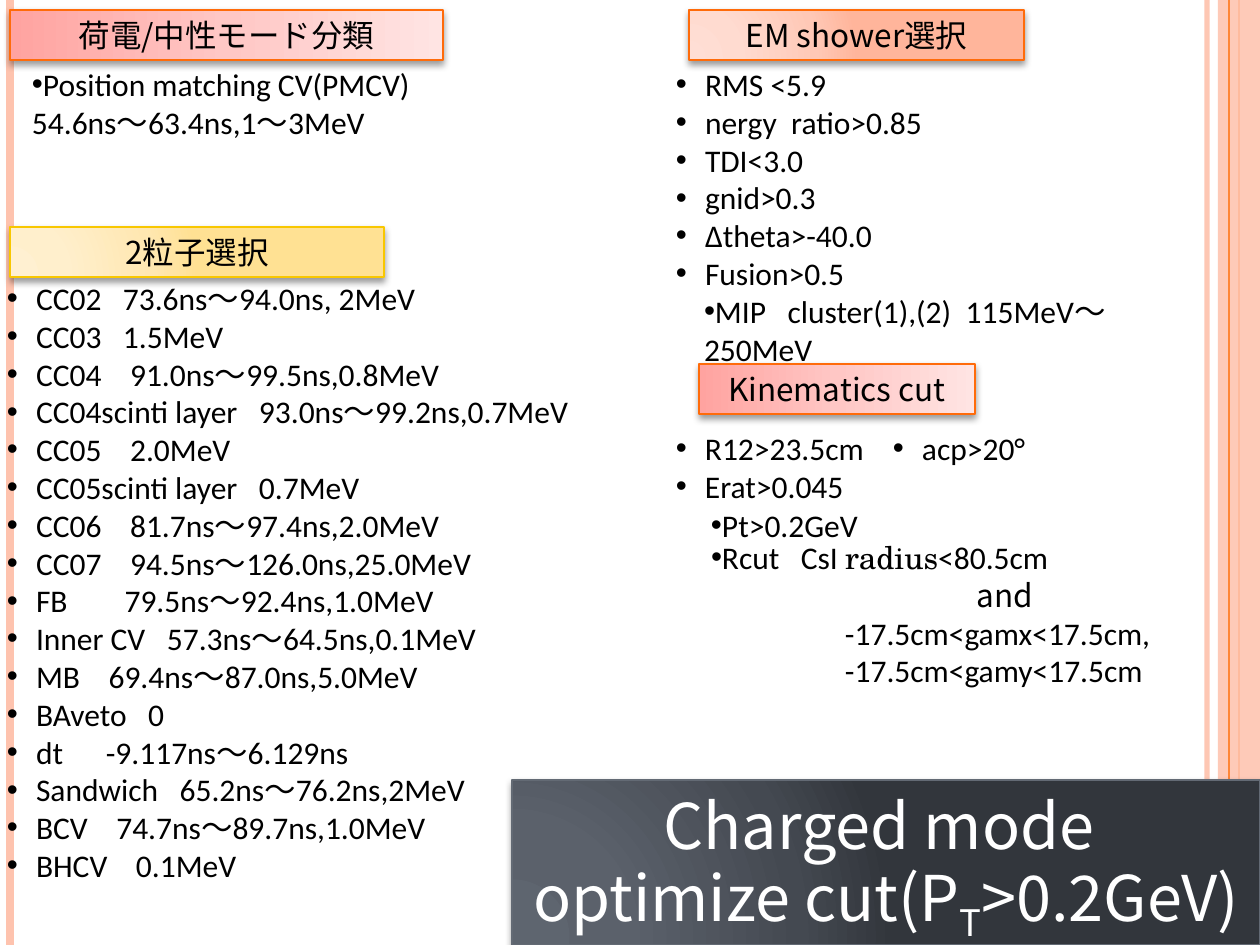
from dataclasses import dataclass

from pptx import Presentation
from pptx import util as u
from pptx.dml.color import RGBColor
from pptx.enum import shapes, text
from pptx.oxml import parse_xml
from pptx.oxml.ns import nsdecls, qn

SCALE = 914400 / 126


@dataclass(frozen=True)
class Theme:
    latin: str = "Calibri"
    asian: str = "Noto Sans CJK JP"
    serif: str = "TeX Gyre Schola"
    body_size: int = 18
    title_size: int = 36
    ink: str = "000000"
    paper: str = "FFFFFF"
    stripe: str = "FEC3AE"
    accent: str = "FE8637"
    orange: str = "FF6B0A"
    yellow: str = "F8C700"
    slate: str = "636A74"
    pink_stops: tuple = ((0, "FFA3A0"), (50, "FFC7C5"), (100, "FFE4E3"))
    peach_stops: tuple = ((0, "FFDED5"), (30, "FFDBD0"), (75, "FFC8B6"), (100, "FFB59B"))
    gold_stops: tuple = ((0, "FFF0D1"), (30, "FFEFCC"), (75, "FFE7B1"), (100, "FFE193"))
    slate_stops: tuple = ((0, "5E656F"), (30, "5B616B"), (75, "444951"), (100, "32363C"))


THEME = Theme()
LINEAR = '<a:lin ang="0" scaled="0"/>'
RADIAL = '<a:path path="circle"><a:fillToRect l="5000" t="100000" r="120000" b="10000"/></a:path>'


def px(value):
    return u.Emu(round(value * SCALE))


def node(tag, attributes="", inner=""):
    return parse_xml(f'<a:{tag} {nsdecls("a")} {attributes}>{inner}</a:{tag}>')


def apply(target, values):
    for name, value in values.items():
        setattr(target, name, value)


def place(shape, box):
    apply(shape, dict(zip(("left", "top", "width", "height"), map(px, box))))


def gap(count):
    return " ", {"spacing": round((count - 1) * 407)}


def row(name, count, value):
    return [name, gap(count), value]


def add_span(para, content, size, color, font):
    words, look = content if isinstance(content, tuple) else (content, {})
    span = para.add_run()
    span.text = words
    span.font.color.rgb = RGBColor.from_string(color)
    apply(span.font, {"size": u.Pt(size), "name": look.get("font", font), "bold": False})
    properties = span._r.get_or_add_rPr()
    properties.append(node("ea", f'typeface="{THEME.asian}"'))
    for key, name in (("spacing", "spc"), ("baseline", "baseline")):
        if key in look:
            properties.set(name, str(look[key]))


def write(shape, lines, bullets=(), margin=0, hang=0, size=THEME.body_size, lead=0,
          color=THEME.ink, font=THEME.latin, align=text.PP_ALIGN.LEFT, wrap=True):
    frame = shape.text_frame
    apply(frame, {"word_wrap": wrap, "auto_size": text.MSO_AUTO_SIZE.NONE,
                  "vertical_anchor": text.MSO_ANCHOR.TOP,
                  "margin_left": px(12), "margin_right": px(12),
                  "margin_top": px(6), "margin_bottom": px(6)})
    for index, line in enumerate(lines):
        para = frame.add_paragraph() if index else frame.paragraphs[0]
        apply(para, {"alignment": align, "line_spacing": u.Pt(size * 1.2),
                     "space_before": u.Pt(lead if index else 0), "space_after": u.Pt(0)})
        properties = para._p.get_or_add_pPr()
        left = margin[index] if isinstance(margin, tuple) else margin
        properties.set("marL", str(px(left)))
        properties.set("indent", str(px(-hang)))
        if index in bullets:
            properties.append(node("buFont", 'typeface="Arial"'))
            properties.append(node("buChar", 'char="•"'))
        else:
            properties.append(node("buNone"))
        for content in [line] if isinstance(line, str) else line:
            add_span(para, content, size, color, font)


def write_list(shape, lines):
    write(shape, lines, bullets=range(len(lines)), margin=63, hang=29)


def add_text(page, box):
    return page.shapes.add_textbox(*map(px, box))


def decorate(shape, stops, direction, line, shadow_alpha, distance):
    shape.line.color.rgb = RGBColor.from_string(line)
    shape.line.width = u.Pt(1)
    shape.fill.gradient()
    properties = shape._element.spPr
    inner = "".join(f'<a:gs pos="{at * 1000}"><a:srgbClr val="{color}"/></a:gs>'
                    for at, color in stops)
    properties.replace(properties.find(qn("a:gradFill")),
                       node("gradFill", 'rotWithShape="1"', f"<a:gsLst>{inner}</a:gsLst>{direction}"))
    shade = f'<a:srgbClr val="{THEME.ink}"><a:alpha val="{shadow_alpha * 1000}"/></a:srgbClr>'
    properties.append(node("effectLst", "", f'<a:outerShdw blurRad="{u.Pt(4)}" dist="{u.Pt(distance)}" '
                           f'dir="5400000" rotWithShape="0">{shade}</a:outerShdw>'))


def add_heading(page, words, box, stops, direction, line):
    shape = page.shapes.add_shape(shapes.MSO_SHAPE.RECTANGLE, *map(px, box))
    shape.shadow.inherit = False
    properties = shape._element.spPr
    properties.remove(properties.find(qn("a:effectLst")))
    decorate(shape, stops, direction, line, 40, 2)
    write(shape, [words], font=THEME.asian, align=text.PP_ALIGN.CENTER)


def set_alpha(shape, percent):
    color = next(shape._element.spPr.iter(qn("a:srgbClr")))
    color.append(node("alpha", f'val="{percent * 1000}"'))


def add_rule(page, x, color, width):
    rule = page.shapes.add_connector(shapes.MSO_CONNECTOR.STRAIGHT, px(x), 0, px(x), px(945))
    rule.line.color.rgb = RGBColor.from_string(color)
    rule.line.width = u.Pt(width)
    rule._element.spPr.append(node("effectLst"))
    return rule


def add_stripes(page):
    set_alpha(add_rule(page, 1207, THEME.stripe, 3), 93)
    add_rule(page, 10, THEME.stripe, 4.5)
    add_rule(page, 1239, THEME.accent, 1.5)
    band = page.shapes.add_shape(shapes.MSO_SHAPE.RECTANGLE, px(1218), 0, px(42), px(945))
    band.shadow.inherit = False
    band.fill.solid()
    band.fill.fore_color.rgb = RGBColor.from_string(THEME.stripe)
    band.line.fill.background()
    set_alpha(band, 87)
    add_rule(page, 1229, THEME.accent, 0.75)


def main():
    deck = Presentation()
    apply(deck, {"slide_width": px(1260), "slide_height": px(945)})
    page = deck.slides.add_slide(deck.slide_layouts[3])
    title, particles, shower = page.placeholders

    add_stripes(page)
    for shape in (particles, shower, title):
        page.shapes._spTree.append(shape._element)

    place(particles, (-39, 273, 659, 624))
    write_list(particles, [
        row("CC02", 3, "73.6ns～94.0ns, 2MeV"),
        row("CC03", 3, "1.5MeV"),
        row("CC04", 4, "91.0ns～99.5ns,0.8MeV"),
        row("CC04scinti layer", 3, "93.0ns～99.2ns,0.7MeV"),
        row("CC05", 4, "2.0MeV"),
        row("CC05scinti layer", 3, "0.7MeV"),
        row("CC06", 4, "81.7ns～97.4ns,2.0MeV"),
        row("CC07", 4, "94.5ns～126.0ns,25.0MeV"),
        row("FB", 8, "79.5ns～92.4ns,1.0MeV"),
        row("Inner CV", 3, "57.3ns～64.5ns,0.1MeV"),
        row("MB", 4, "69.4ns～87.0ns,5.0MeV"),
        row("BAveto", 3, "0"),
        row("dt", 6, "-9.117ns～6.129ns"),
        row("Sandwich", 3, "65.2ns～76.2ns,2MeV"),
        row("BCV", 4, "74.7ns～89.7ns,1.0MeV"),
        row("BHCV", 4, "0.1MeV"),
    ])
    place(shower, (630, 59, 630, 242))
    write_list(shower, ["RMS <5.9", row("nergy", 2, "ratio>0.85"), "TDI<3.0",
                        "gnid>0.3", "Δtheta>-40.0", "Fusion>0.5"])
    place(title, (512, 780, 748, 165))
    decorate(title, THEME.slate_stops, RADIAL, THEME.slate, 42, 1.6)
    write(title, ["Charged mode ", ["optimize cut(P", ("T", {"baseline": -25000}), ">0.2GeV)"]],
          size=THEME.title_size, lead=4, color=THEME.paper, font=THEME.asian,
          align=text.PP_ALIGN.CENTER)

    write(add_text(page, (20, 59, 416, 89)),
          ["Position matching CV(PMCV)", "54.6ns～63.4ns,1～3MeV"], bullets=(0,), wrap=False)
    write(add_text(page, (699, 532, 550, 165)), [
        ["Rcut", gap(3), "CsI ", ("radius", {"font": THEME.serif}), "<80.5cm"],
        [("and", {"font": THEME.asian})],
        "-17.5cm<gamx<17.5cm,",
        "-17.5cm<gamy<17.5cm",
    ], bullets=(0,), margin=(0, 266, 134, 134))
    write_list(add_text(page, (630, 423, 630, 89)), ["R12>23.5cm", "Erat>0.045"])
    write_list(add_text(page, (847, 423, 246, 50)), ["acp>20°"])
    write(add_text(page, (699, 500, 174, 50)), ["Pt>0.2GeV"], bullets=(0,), wrap=False)
    write(add_text(page, (692, 286, 500, 88)),
          [["MIP", gap(3), "cluster(1),(2)", gap(2), "115MeV～250MeV"]], bullets=(0,))

    for words, box, stops, direction, line in (
        ("荷電/中性モード分類", (10, 10, 433, 50), THEME.pink_stops, LINEAR, THEME.orange),
        ("EM shower選択", (689, 10, 335, 50), THEME.peach_stops, RADIAL, THEME.orange),
        ("Kinematics cut", (699, 364, 276, 50), THEME.pink_stops, LINEAR, THEME.orange),
        ("2粒子選択", (10, 227, 374, 50), THEME.gold_stops, RADIAL, THEME.yellow),
    ):
        add_heading(page, words, box, stops, direction, line)
    deck.save("out.pptx")


if __name__ == "__main__":
    main()
